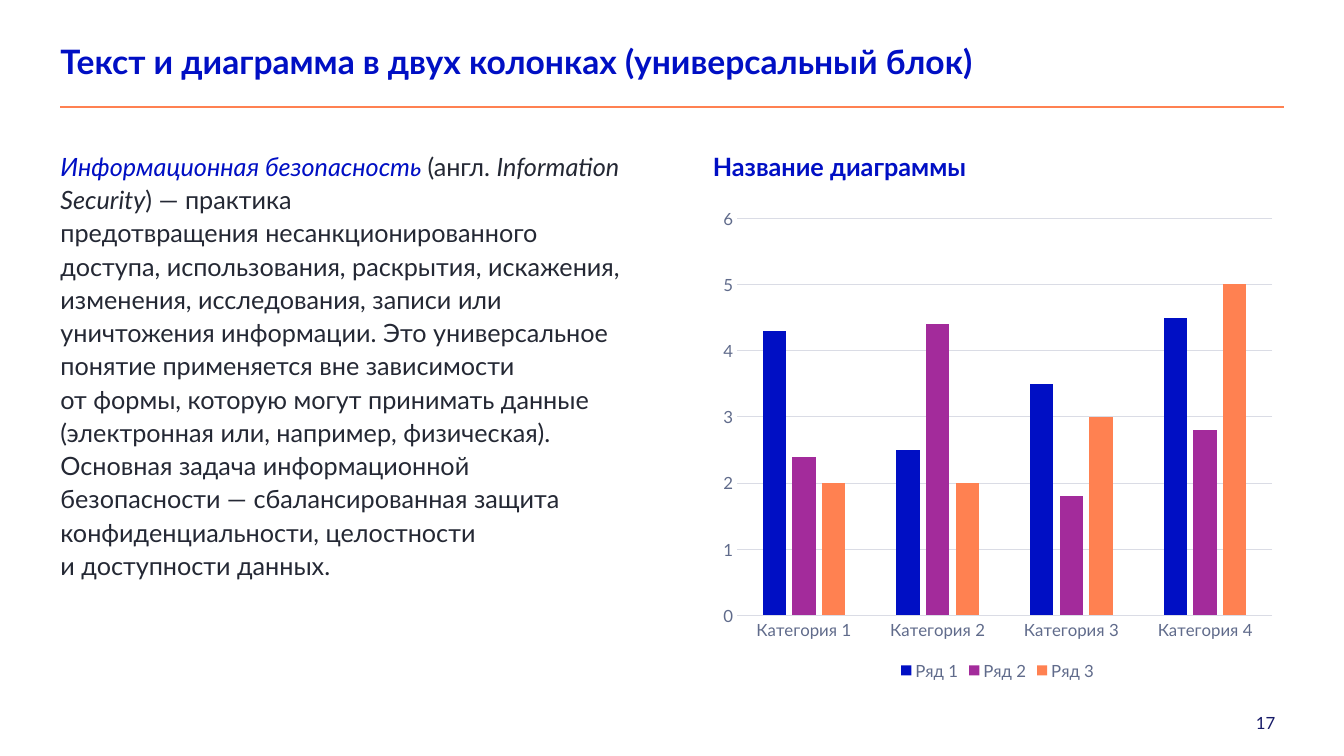
from dataclasses import dataclass

from lxml import etree
from pptx import Presentation
from pptx.chart.data import CategoryChartData
from pptx.dml.color import RGBColor
from pptx.enum.chart import XL_CHART_TYPE, XL_LEGEND_POSITION, XL_TICK_MARK
from pptx.enum.shapes import MSO_CONNECTOR
from pptx.enum.text import MSO_ANCHOR, PP_ALIGN
from pptx.oxml.ns import qn
from pptx.util import Inches, Pt


@dataclass(frozen=True)
class Theme:
    font: str = "Lato"
    blue: RGBColor = RGBColor(0x00, 0x0F, 0xC4)
    purple: RGBColor = RGBColor(0xA3, 0x2B, 0x9B)
    orange: RGBColor = RGBColor(0xFF, 0x81, 0x51)
    ink: RGBColor = RGBColor(0x24, 0x28, 0x34)
    navy: RGBColor = RGBColor(0x17, 0x1B, 0x68)
    label: RGBColor = RGBColor(0x60, 0x6B, 0x8B)
    grid: RGBColor = RGBColor(0xDA, 0xDC, 0xE5)
    title_size: Pt = Pt(24)
    body_size: Pt = Pt(18)
    small_size: Pt = Pt(12)


theme = Theme()
NO_BREAK_SPACE = chr(160)


def style_font(font, size, color, bold=False):
    font.name, font.size, font.bold = theme.font, size, bold
    font.color.rgb = color


def add_text(left, top, width, height, runs, size, color, bold=False, spacing=1.0):
    """Add a one-paragraph text box; runs are (text, italic, colour), ~ is a no-break space."""
    box = slide.shapes.add_textbox(Inches(left), Inches(top), Inches(width), Inches(height))
    frame = box.text_frame
    frame.word_wrap = True
    frame.margin_left = frame.margin_right = frame.margin_top = frame.margin_bottom = 0
    paragraph = frame.paragraphs[0]
    paragraph.line_spacing = spacing
    style_font(paragraph.font, size, color, bold)
    for text, italic, run_color in runs:
        run = paragraph.add_run()
        run.text = text.replace("~", NO_BREAK_SPACE)
        if italic:
            run.font.italic = True
        if run_color:
            run.font.color.rgb = run_color
    return frame


presentation = Presentation()
presentation.slide_width, presentation.slide_height = Inches(13.33), Inches(7.5)
slide = presentation.slides.add_slide(presentation.slide_layouts[6])

# Title and rule
heading = add_text(0.6, 0.45, 10.51, 0.36,
                   [("Текст и диаграмма в двух колонках (универсальный блок)", False, None)],
                   theme.title_size, theme.blue, bold=True, spacing=0.9)
heading.vertical_anchor = MSO_ANCHOR.MIDDLE

rule = slide.shapes.add_connector(MSO_CONNECTOR.STRAIGHT, Inches(0.6), Inches(1.06),
                                  Inches(12.73), Inches(1.06))
rule.line.color.rgb = theme.orange
rule.line.width = Pt(1.25)
etree.SubElement(rule._element.spPr, qn("a:effectLst"))

# Left column: definition
definition = [
    ("Информационная безопасность ", True, theme.blue),
    ("(англ.~", False, None),
    ("Information Security", True, None),
    (")~— практика предотвращения~несанкционированного доступа, использования, "
     "раскрытия, искажения, изменения, исследования, записи или уничтожения~информации. "
     "Это универсальное понятие применяется вне зависимости от~формы, которую могут "
     "принимать данные (электронная или, например, физическая). Основная задача "
     "информационной безопасности~— сбалансированная защита конфиденциальности, "
     "целостности и~доступности~данных.", False, None),
]
add_text(0.6, 1.47, 5.67, 5.51, definition, theme.body_size, theme.ink, spacing=1.1)

# Right column: chart heading and chart
add_text(7.07, 1.47, 5.67, 0.69, [("Название диаграммы", False, None)],
         theme.body_size, theme.blue, bold=True, spacing=1.1)

chart_data = CategoryChartData()
chart_data.categories = [f"Категория {number}" for number in range(1, 5)]
chart_data.add_series("Ряд 1", (4.3, 2.5, 3.5, 4.5))
chart_data.add_series("Ряд 2", (2.4, 4.4, 1.8, 2.8))
chart_data.add_series("Ряд 3", (2, 2, 3, 5))
chart = slide.shapes.add_chart(XL_CHART_TYPE.COLUMN_CLUSTERED, Inches(7.06), Inches(1.97),
                               Inches(5.67), Inches(4.82), chart_data).chart
chart.has_title = False
style_font(chart.font, theme.small_size, theme.label)

columns = chart.plots[0]
columns.gap_width, columns.overlap = 219, -27
columns.vary_by_categories = False
for series, color in zip(columns.series, (theme.blue, theme.purple, theme.orange)):
    series.format.fill.solid()
    series.format.fill.fore_color.rgb = color
    series.invert_if_negative = False

categories, values = chart.category_axis, chart.value_axis
for axis in (categories, values):
    axis.major_tick_mark = axis.minor_tick_mark = XL_TICK_MARK.NONE
    style_font(axis.tick_labels.font, theme.small_size, theme.label)
values.minimum_scale, values.maximum_scale, values.major_unit = 0, 6, 1
values.format.line.fill.background()
for line in (categories.format.line, values.major_gridlines.format.line):
    line.color.rgb = theme.grid
    line.width = Pt(0.75)

chart.has_legend = True
chart.legend.position = XL_LEGEND_POSITION.BOTTOM
chart.legend.include_in_layout = False
style_font(chart.legend.font, theme.small_size, theme.label)

# Page number
page_number = add_text(10.23, 7.07, 2.42, 0.2, [("17", False, None)],
                       theme.small_size, theme.navy)
page_number.paragraphs[0].alignment = PP_ALIGN.RIGHT

presentation.save("out.pptx")
